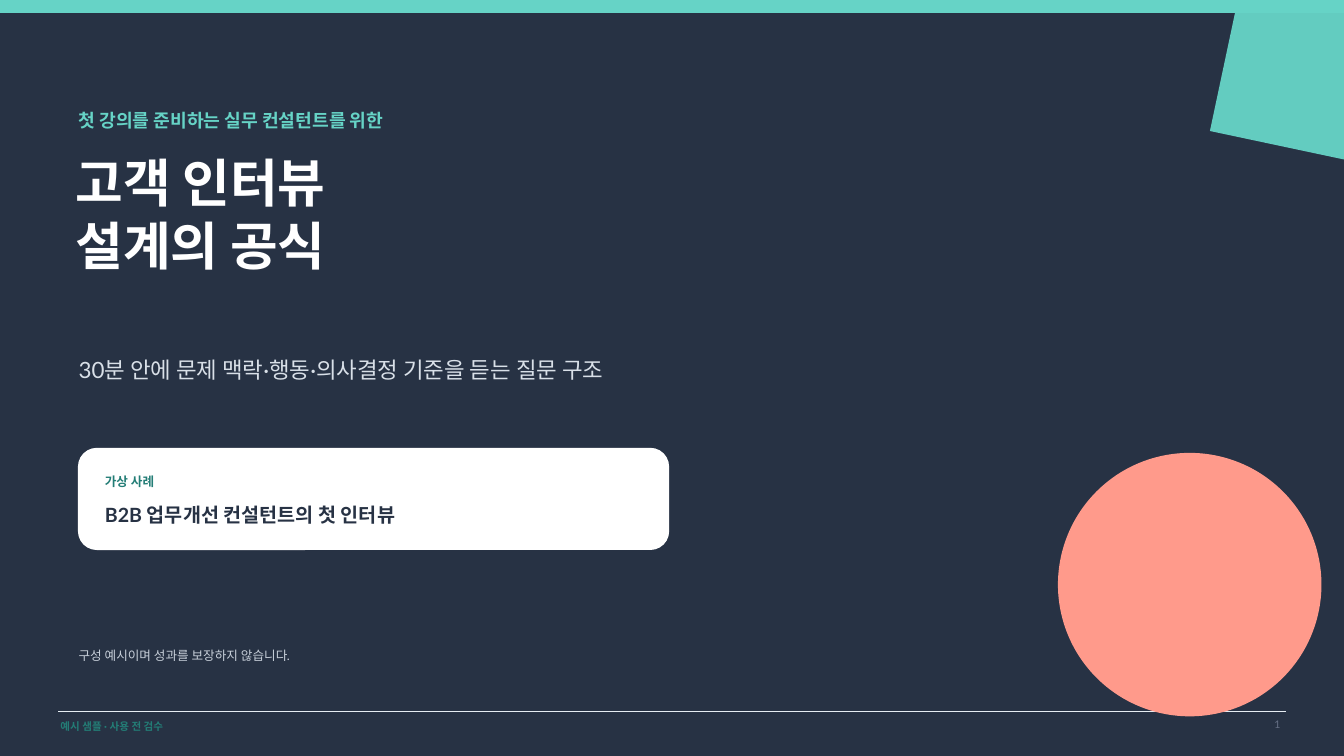
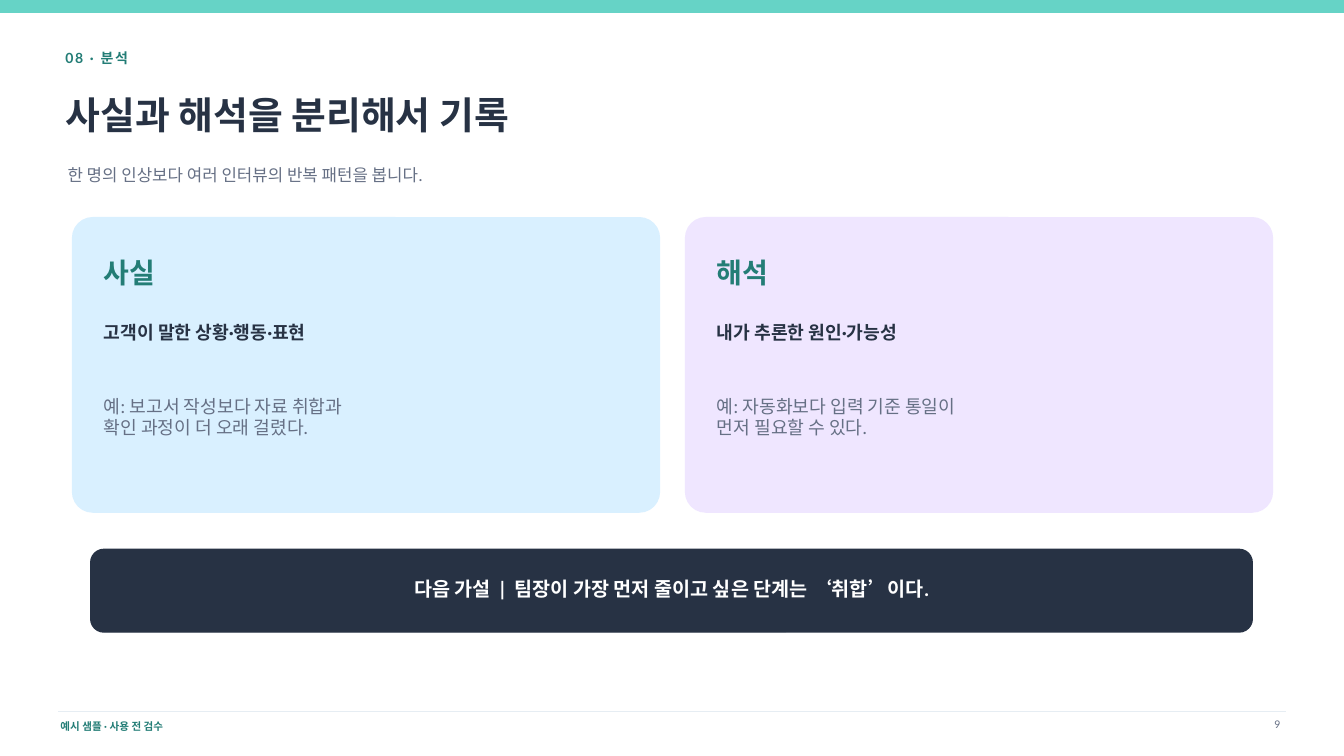
from dataclasses import dataclass

from lxml.etree import SubElement
from pptx import Presentation
from pptx.dml.color import RGBColor
from pptx.enum.shapes import MSO_CONNECTOR, MSO_SHAPE
from pptx.enum.text import MSO_ANCHOR, PP_ALIGN
from pptx.oxml.ns import qn
from pptx.presentation import Presentation as Deck
from pptx.shapes.autoshape import Shape
from pptx.slide import Slide
from pptx.util import Inches, Pt

FONT = "Lato"
WIDTH, HEIGHT = 13.33, 7.5
COLORS = {
    "navy": "273244",
    "mint": "66D3C6",
    "teal": "237D76",
    "coral": "FF9A8B",
    "white": "FFFFFF",
    "gray": "667085",
    "mist": "D9E0E8",
    "silver": "C8D0DA",
    "rule": "E6EDF3",
    "sky": "D9F0FF",
    "lilac": "EFE6FF",
}


@dataclass(frozen=True)
class Area:
    left: float
    top: float
    width: float
    height: float


@dataclass(frozen=True)
class Card:
    heading: str
    summary: str
    example: str
    color: str


CARDS = [
    Card("사실", "고객이 말한 상황·행동·표현",
         "예: 보고서 작성보다 자료 취합과\n확인 과정이 더 오래 걸렸다.", "sky"),
    Card("해석", "내가 추론한 원인·가능성",
         "예: 자동화보다 입력 기준 통일이\n먼저 필요할 수 있다.", "lilac"),
]
CARD_LEFT, CARD_TOP, CARD_WIDTH, CARD_HEIGHT, CARD_GAP = 0.72, 2.16, 5.82, 2.92, 0.26
CARD_PADDING = 0.31


def rgb(name: str) -> RGBColor:
    return RGBColor.from_string(COLORS[name])


def add_text(page: Slide, area: Area, text: str, *, size: float, color: str,
             bold: bool = False, align: PP_ALIGN = PP_ALIGN.LEFT,
             anchor: MSO_ANCHOR = MSO_ANCHOR.MIDDLE, spacing: float = 0) -> None:
    box = page.shapes.add_textbox(Inches(area.left), Inches(area.top),
                                  Inches(area.width), Inches(area.height))
    frame = box.text_frame
    frame.word_wrap = True
    frame.vertical_anchor = anchor
    frame.margin_left = frame.margin_right = frame.margin_top = frame.margin_bottom = 0
    for index, line in enumerate(text.split("\n")):
        para = frame.add_paragraph() if index else frame.paragraphs[0]
        para.alignment = align
        span = para.add_run()
        span.text = line
        span.font.name = FONT
        span.font.size = Pt(size)
        span.font.bold = bold
        span.font.color.rgb = rgb(color)
        if spacing:
            span.font._element.set("spc", str(round(spacing * 100)))


def add_block(page: Slide, kind: MSO_SHAPE, area: Area, color: str, *,
              outline: bool = True, radius: float = 0) -> Shape:
    block = page.shapes.add_shape(kind, Inches(area.left), Inches(area.top),
                                  Inches(area.width), Inches(area.height))
    block.shadow.inherit = False
    block.fill.solid()
    block.fill.fore_color.rgb = rgb(color)
    if outline:
        block.line.color.rgb = rgb(color)
        block.line.width = Pt(1)
    else:
        block.line.fill.background()
    if radius:
        block.adjustments[0] = radius / min(area.width, area.height)
    return block


def set_opacity(block: Shape, percent: int) -> None:
    color = block.fill._xPr.find(qn("a:solidFill"))[0]
    SubElement(color, qn("a:alpha")).set("val", str(percent * 1000))


def start_page(deck: Deck, background: str) -> Slide:
    page = deck.slides.add_slide(deck.slide_layouts[6])
    page.background.fill.solid()
    page.background.fill.fore_color.rgb = rgb(background)
    add_block(page, MSO_SHAPE.RECTANGLE, Area(0, 0, WIDTH, 0.12), "mint")
    rule = page.shapes.add_connector(MSO_CONNECTOR.STRAIGHT, Inches(0.58), Inches(7.06),
                                     Inches(12.75), Inches(7.06))
    rule.line.color.rgb = rgb("rule")
    rule.line.width = Pt(1)
    SubElement(rule._element.spPr, qn("a:effectLst"))
    add_text(page, Area(0.6, 7.12, 4.2, 0.18), "예시 샘플 · 사용 전 검수",
             size=7.5, color="teal", bold=True)
    return page


def add_page_number(page: Slide, number: int) -> None:
    add_text(page, Area(12.2, 7.12, 0.5, 0.18), str(number), size=7.5, color="gray",
             align=PP_ALIGN.RIGHT, anchor=MSO_ANCHOR.TOP)


def add_heading(page: Slide, section: str, title: str, lead: str) -> None:
    add_text(page, Area(0.65, 0.43, 4.9, 0.28), section, size=10, color="teal",
             bold=True, spacing=1.2)
    add_text(page, Area(0.65, 0.82, 12, 0.62), title, size=27, color="navy", bold=True)
    add_text(page, Area(0.67, 1.52, 11.8, 0.42), lead, size=12, color="gray")


def add_card(page: Slide, card: Card, left: float) -> None:
    add_block(page, MSO_SHAPE.ROUNDED_RECTANGLE,
              Area(left, CARD_TOP, CARD_WIDTH, CARD_HEIGHT), card.color, radius=0.2)
    inner = left + CARD_PADDING
    add_text(page, Area(inner, 2.52, 1.1, 0.36), card.heading, size=20, color="teal", bold=True)
    add_text(page, Area(inner, 3.15, 4.9, 0.3), card.summary, size=13, color="navy", bold=True)
    add_text(page, Area(inner, 3.77, 4.8, 0.73), card.example, size=13, color="gray")


def build_cover(deck: Deck) -> None:
    page = start_page(deck, "navy")
    wedge = add_block(page, MSO_SHAPE.ARC, Area(9.6, -1.1, 4.8, 4.8), "mint", outline=False)
    wedge.rotation = 12
    set_opacity(wedge, 96)
    add_block(page, MSO_SHAPE.OVAL, Area(10.5, 4.5, 2.6, 2.6), "coral")
    add_text(page, Area(0.78, 1.02, 7.8, 0.35), "첫 강의를 준비하는 실무 컨설턴트를 위한",
             size=13, color="mint", bold=True)
    add_text(page, Area(0.75, 1.5, 8.7, 1.6), "고객 인터뷰\n설계의 공식",
             size=37, color="white", bold=True, anchor=MSO_ANCHOR.TOP)
    add_text(page, Area(0.78, 3.38, 8.5, 0.58),
             "30분 안에 문제 맥락·행동·의사결정 기준을 듣는 질문 구조", size=16, color="mist")
    add_block(page, MSO_SHAPE.ROUNDED_RECTANGLE, Area(0.78, 4.45, 5.85, 1), "white", radius=0.18)
    add_text(page, Area(1.04, 4.68, 1, 0.2), "가상 사례", size=9, color="teal", bold=True)
    add_text(page, Area(1.04, 4.98, 5.2, 0.25), "B2B 업무개선 컨설턴트의 첫 인터뷰",
             size=14, color="navy", bold=True)
    add_text(page, Area(0.78, 6.38, 8, 0.25), "구성 예시이며 성과를 보장하지 않습니다.",
             size=9, color="silver")
    add_page_number(page, 1)


def build_analysis(deck: Deck) -> None:
    page = start_page(deck, "white")
    add_heading(page, "08 · 분석", "사실과 해석을 분리해서 기록",
                "한 명의 인상보다 여러 인터뷰의 반복 패턴을 봅니다.")
    for index, card in enumerate(CARDS):
        add_card(page, card, CARD_LEFT + index * (CARD_WIDTH + CARD_GAP))
    add_block(page, MSO_SHAPE.ROUNDED_RECTANGLE, Area(0.9, 5.45, 11.52, 0.82), "navy", radius=0.13)
    add_text(page, Area(1.22, 5.71, 10.88, 0.27),
             "다음 가설  |  팀장이 가장 먼저 줄이고 싶은 단계는 ‘취합’이다.",
             size=14, color="white", bold=True, align=PP_ALIGN.CENTER)
    add_page_number(page, 9)


def main() -> None:
    deck = Presentation()
    deck.slide_width = Inches(WIDTH)
    deck.slide_height = Inches(HEIGHT)
    build_cover(deck)
    build_analysis(deck)
    deck.save("out.pptx")


if __name__ == "__main__":
    main()
